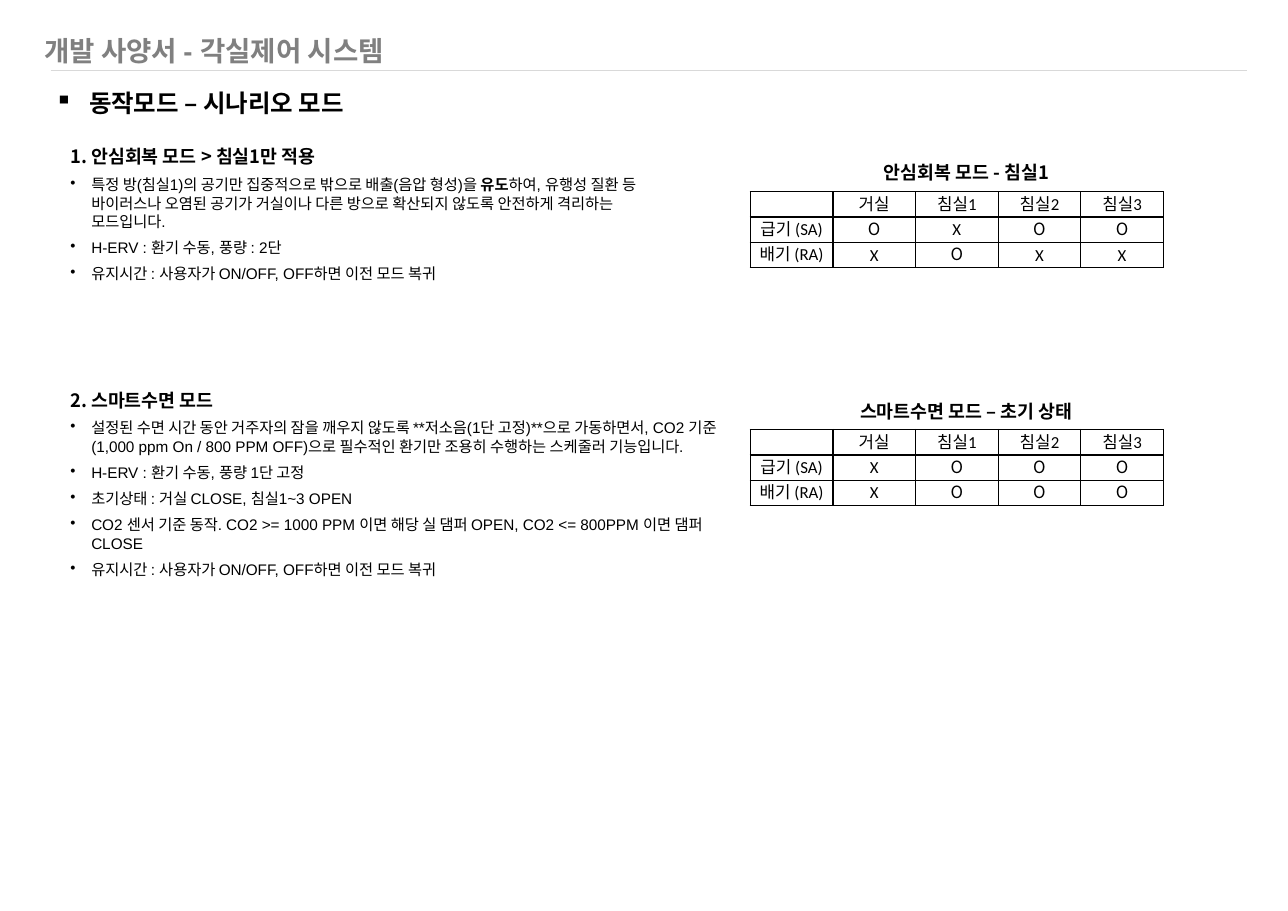
from lxml import etree
from pptx import Presentation
from pptx import util as u
from pptx.dml import color
from pptx.enum import shapes, text
from pptx.oxml import ns

COLORS = {"ink": "000000", "title": "808080", "rule": "D9D9D9", "paper": "FFFFFF"}
KOREAN = "Noto Sans CJK KR"
FORMATS = {
    "title": dict(name="Arial", size=u.Pt(18), bold=True),
    "topic": dict(name="Calibri", size=u.Pt(16), bold=True),
    "heading": dict(name=KOREAN, size=u.Pt(12), bold=True),
    "body": dict(name="Arial", size=u.Pt(10), bold=False),
    "label": dict(name="Calibri", size=u.Pt(11), bold=False),
    "open": dict(name=KOREAN, size=u.Pt(11), bold=False),
}
LEADING = 1.21


def rgb(key):
    return color.RGBColor.from_string(COLORS[key])


def set_all(target, values):
    for key, value in values.items():
        setattr(target, key, value)


class Sheet:
    def __init__(self, deck):
        self.deck = deck
        self.slide = deck.slides.add_slide(deck.slide_layouts[5])

    def place(self, left, top, width, height):
        across, down = self.deck.slide_width / 100, self.deck.slide_height / 100
        return [round(n) for n in (left * across, top * down, width * across, height * down)]

    def typeset(self, paragraph, parts, style, ink="ink", align=text.PP_ALIGN.LEFT,
                bullet=None, indent=0, before=0):
        paragraph.alignment = align
        props = paragraph._p.get_or_add_pPr()
        if bullet:
            props.set("marL", str(u.Inches(indent)))
            props.set("indent", str(-u.Inches(indent)))
            etree.SubElement(props, ns.qn("a:buChar"), char=bullet)
        size = FORMATS[style]["size"]
        set_all(paragraph, dict(line_spacing=u.Pt(round(size.pt * LEADING, 1)),
                                space_before=u.Pt(before)))
        for words, bold in parts:
            run = paragraph.add_run()
            run.text = words
            set_all(run.font, FORMATS[style])
            if bold:
                run.font.bold = True
            run.font.color.rgb = rgb(ink)
            latin = run.font._element.find(ns.qn("a:latin"))
            latin.addnext(etree.Element(ns.qn("a:ea"), typeface=KOREAN))

    def title(self, words, area):
        holder = self.slide.shapes.title
        set_all(holder, dict(zip(("left", "top", "width", "height"), self.place(*area))))
        set_all(holder.text_frame, dict(vertical_anchor=text.MSO_ANCHOR.BOTTOM,
                                        word_wrap=True, auto_size=text.MSO_AUTO_SIZE.NONE))
        self.typeset(holder.text_frame.paragraphs[0], [(words, False)], "title", "title")

    def rule(self, left, right, top):
        x, y, width, _ = self.place(left, top, right - left, 0)
        line = self.slide.shapes.add_connector(shapes.MSO_CONNECTOR.STRAIGHT, x, y, x + width, y)
        line.line.color.rgb = rgb("rule")
        line.line.width = u.Pt(0.5)
        etree.SubElement(line._element.spPr, ns.qn("a:effectLst"))

    def box(self, area):
        frame = self.slide.shapes.add_textbox(*self.place(*area)).text_frame
        frame.word_wrap = True
        return frame

    def topic(self, words, area):
        self.typeset(self.box(area).paragraphs[0], [(words, False)], "topic",
                     bullet="▪", indent=0.31)

    def section(self, heading, points, area):
        frame = self.box(area)
        self.typeset(frame.paragraphs[0], [(heading, False)], "heading")
        for parts in points:
            if isinstance(parts, str):
                parts = [(parts, False)]
            self.typeset(frame.add_paragraph(), parts, "body", bullet="•", indent=0.19, before=5)

    def caption(self, words, area):
        plate = self.slide.shapes.add_shape(shapes.MSO_SHAPE.RECTANGLE, *self.place(*area))
        plate.shadow.inherit = False
        plate.fill.solid()
        plate.fill.fore_color.rgb = rgb("paper")
        plate.line.fill.background()
        margins = {f"margin_{side}": u.Inches(0.04) for side in ("left", "right", "top", "bottom")}
        set_all(plate.text_frame, dict(margins, word_wrap=True,
                                       vertical_anchor=text.MSO_ANCHOR.TOP))
        self.typeset(plate.text_frame.paragraphs[0], [(words, False)], "heading",
                     align=text.PP_ALIGN.CENTER)

    def border(self, cell):
        props = cell._tc.get_or_add_tcPr()
        for side in ("lnL", "lnR", "lnT", "lnB"):
            line = etree.SubElement(props, ns.qn(f"a:{side}"), w=str(u.Pt(1)))
            fill = etree.SubElement(line, ns.qn("a:solidFill"))
            etree.SubElement(fill, ns.qn("a:srgbClr"), val=COLORS["ink"])

    def table(self, rows, area):
        grid = self.slide.shapes.add_table(len(rows), len(rows[0]), *self.place(*area)).table
        set_all(grid, dict(first_row=False, horz_banding=False))
        inset = u.Inches(0.01)
        for r, row in enumerate(rows):
            for c, words in enumerate(row):
                cell = grid.cell(r, c)
                set_all(cell, dict(margin_left=inset, margin_right=inset, margin_top=inset,
                                   margin_bottom=0, vertical_anchor=text.MSO_ANCHOR.MIDDLE))
                self.border(cell)
                cell.fill.background()
                paragraph = cell.text_frame.paragraphs[0]
                if words:
                    self.typeset(paragraph, [(words, False)], "open" if words == "O" else "label",
                                 align=text.PP_ALIGN.CENTER)
                else:
                    etree.SubElement(paragraph._p, ns.qn("a:endParaRPr"), sz="1100")


def damper_rows(supply, exhaust):
    return [["", "거실", "침실1", "침실2", "침실3"],
            ["급기 (SA)", *supply], ["배기 (RA)", *exhaust]]


def main():
    deck = Presentation()
    set_all(deck, dict(slide_width=u.Inches(11.69), slide_height=u.Inches(8.27)))
    sheet = Sheet(deck)
    sheet.rule(3.93, 96.84, 7.74)
    sheet.title("개발 사양서 - 각실제어 시스템", (2.57, 3.14, 32.34, 4.84))
    sheet.topic("동작모드 – 시나리오 모드", (3.42, 9.07, 92.47, 4.47))

    duration = "유지시간 : 사용자가 ON/OFF, OFF하면 이전 모드 복귀"
    recovery = [
        [("특정 방(침실1)의 공기만 집중적으로 밖으로 배출(음압 형성)을 ", False), ("유도", True),
         ("하여, 유행성 질환 등 바이러스나 오염된 공기가 거실이나 다른 방으로 "
          "확산되지 않도록 안전하게 격리하는 모드입니다.", False)],
        "H-ERV : 환기 수동, 풍량 : 2단",
        duration,
    ]
    sleep = [
        "설정된 수면 시간 동안 거주자의 잠을 깨우지 않도록 **저소음(1단 고정)**으로 가동하면서, "
        "CO2 기준(1,000 ppm On / 800 PPM OFF)으로 필수적인 환기만 조용히 수행하는 스케줄러 기능입니다.",
        "H-ERV : 환기 수동, 풍량 1단 고정",
        "초기상태 : 거실 CLOSE, 침실1~3 OPEN",
        "CO2 센서 기준 동작. CO2 >= 1000 PPM 이면 해당 실 댐퍼 OPEN, CO2 <= 800PPM 이면 댐퍼 CLOSE",
        duration,
    ]
    modes = [
        ("1. 안심회복 모드 > 침실1만 적용", recovery, (4.62, 15.36, 46.36, 16.93),
         "안심회복 모드 - 침실1", 17.17, damper_rows("OXOO", "XOXX"), 21.04),
        ("2. 스마트수면 모드", sleep, (4.62, 42.08, 52.95, 25.03),
         "스마트수면 모드 – 초기 상태", 43.41, damper_rows("XOOO", "XOOO"), 47.16),
    ]
    for heading, points, area, caption, caption_top, rows, table_top in modes:
        sheet.section(heading, points, area)
        sheet.table(rows, (58.25, table_top, 32.08, 8.34))
        sheet.caption(caption, (63.22, caption_top, 23.61, 3.39))
    deck.save("out.pptx")


if __name__ == "__main__":
    main()
